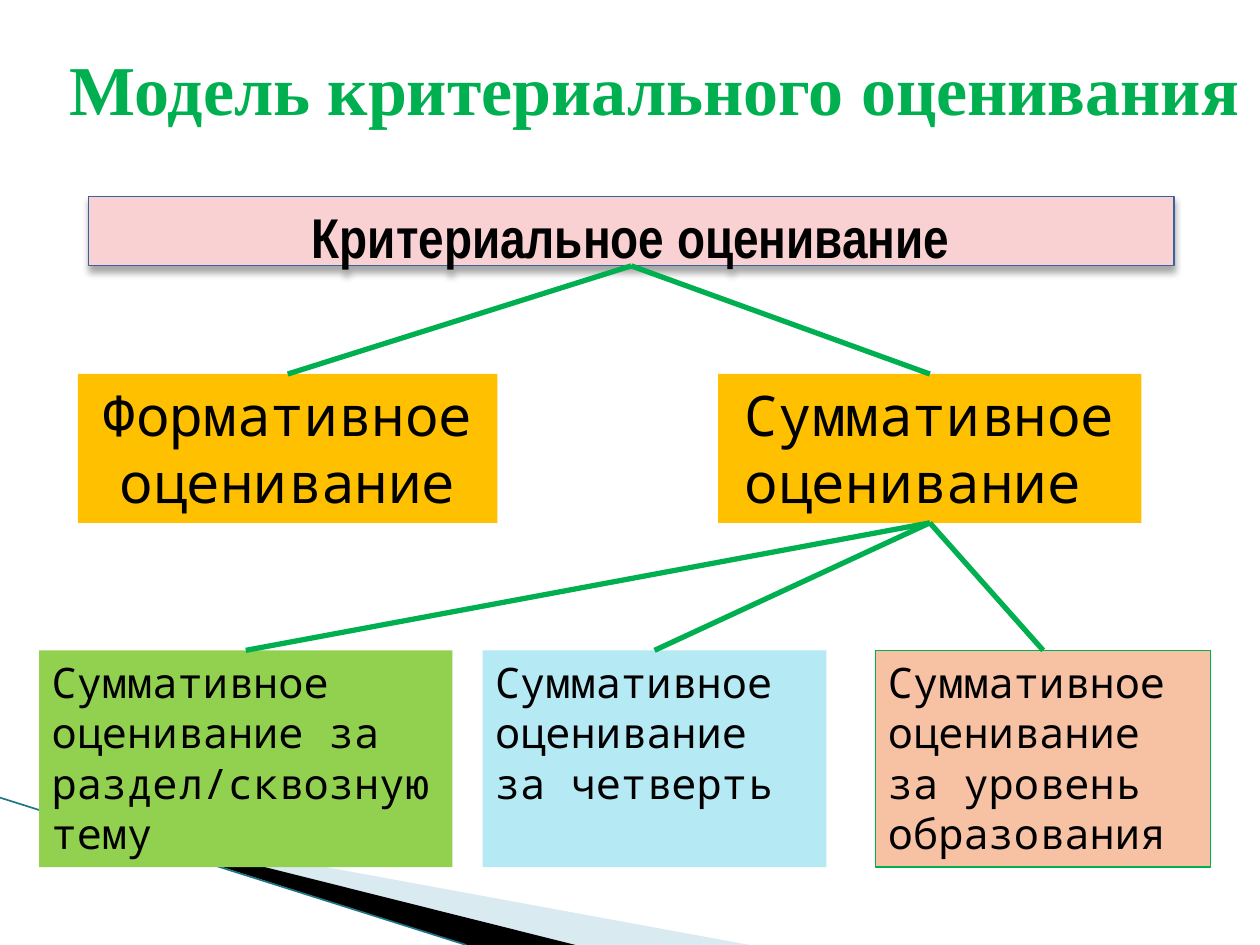
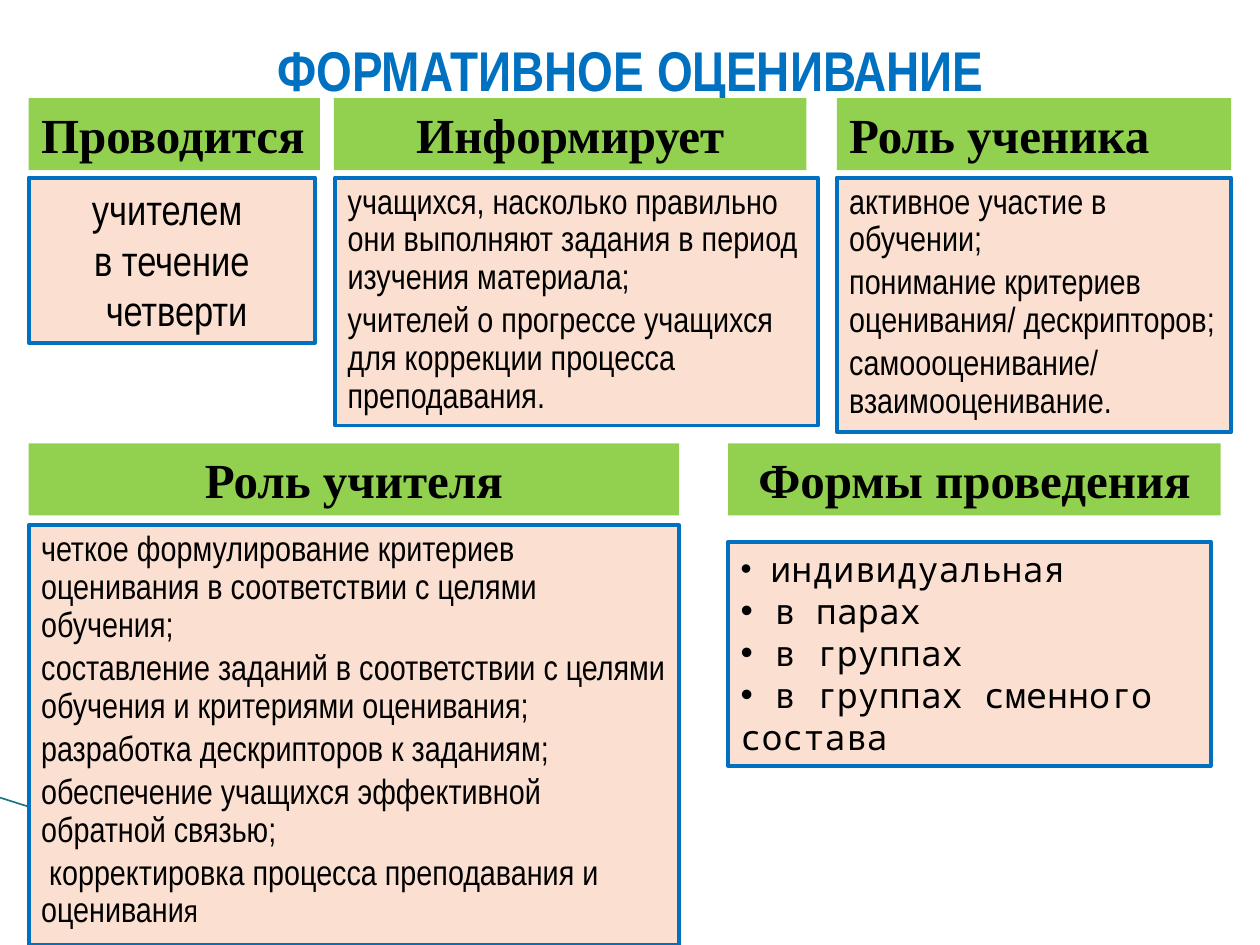
"""Builds two slides on criteria-based assessment: the model and the formative part."""
from lxml import etree
from pptx import Presentation
from pptx.dml.color import RGBColor
from pptx.enum.shapes import MSO_CONNECTOR, MSO_SHAPE
from pptx.enum.text import MSO_ANCHOR, MSO_AUTO_SIZE, PP_ALIGN
from pptx.oxml import parse_xml
from pptx.oxml.ns import nsdecls, qn
from pptx.util import Cm, Pt

RECTANGLE = MSO_SHAPE.RECTANGLE
STRAIGHT = MSO_CONNECTOR.STRAIGHT
LEFT, CENTER = PP_ALIGN.LEFT, PP_ALIGN.CENTER
TOP, MIDDLE = MSO_ANCHOR.TOP, MSO_ANCHOR.MIDDLE
NO_AUTOSIZE = MSO_AUTO_SIZE.NONE
BOTTOM_SITE, TOP_SITE = 2, 0

BLACK = RGBColor(0x00, 0x00, 0x00)
GREEN = RGBColor(0x00, 0xB0, 0x50)
BLUE = RGBColor(0x00, 0x70, 0xC0)
NAVY = RGBColor(0x39, 0x63, 0x9D)
PINK = RGBColor(0xF9, 0xD1, 0xD3)
AMBER = RGBColor(0xFF, 0xC0, 0x00)
LIME = RGBColor(0x92, 0xD0, 0x50)
SKY = RGBColor(0xB5, 0xE9, 0xF4)
SALMON = RGBColor(0xF7, 0xC1, 0xA4)
PEACH = RGBColor(0xFB, 0xE0, 0xD1)
PALE_BLUE = RGBColor(0xD9, 0xEA, 0xF1)
TEAL = RGBColor(0x1F, 0x75, 0x87)

NARROW, MONO, SERIF = "Arial Narrow", "Noto Sans Mono", "Times New Roman"

MODEL_TITLE = "Модель критериального оценивания"
ROOT = "Критериальное оценивание"
KINDS = [
    (1.57, 8.46, ["Формативное ", "оценивание"]),
    (14.48, 8.53, ["Суммативное ", "оценивание "]),
]
SUMMATIVE = [
    (0.79, 8.33, LIME, None, ["Суммативное оценивание за раздел/сквозную тему"]),
    (9.73, 6.93, SKY, None, ["Суммативное оценивание", "за четверть"]),
    (17.65, 6.76, SALMON, GREEN, ["Суммативное оценивание за уровень образования"]),
]

FORMATIVE_TITLE = "ФОРМАТИВНОЕ ОЦЕНИВАНИЕ"
WHEN = dict(size=24, name=NARROW, align=CENTER)
ROLE = dict(size=20, name=NARROW, spacing=0.9, after=3)
FORMS = dict(size=20, name=MONO, bullet="•")
PANELS = [
    ("Проводится", LEFT, (0.58, 1.98, 5.87), (0.58, 3.58, 5.77, 3.33), WHEN,
     ["учителем ", "в течение", " четверти"]),
    ("Информирует", CENTER, (6.73, 1.98, 9.53), (6.76, 3.58, 9.73, 5), ROLE,
     ["учащихся, насколько правильно они выполняют задания в период изучения материала;",
      "учителей о прогрессе учащихся для коррекции процесса преподавания."]),
    ("Роль ученика", LEFT, (16.87, 1.98, 7.95), (16.87, 3.58, 7.95, 5.13), ROLE,
     ["активное участие в обучении;",
      "понимание критериев оценивания/ дескрипторов;",
      "самоооценивание/ взаимооценивание."]),
    ("Роль учителя", CENTER, (0.58, 8.94, 13.11), (0.58, 10.59, 13.11, 8.46), ROLE,
     ["четкое формулирование критериев оценивания в соответствии с целями обучения;",
      "составление заданий в соответствии с целями обучения и критериями оценивания;",
      "разработка дескрипторов к заданиям;",
      "обеспечение учащихся эффективной обратной связью;",
      [(" корректировка процесса преподавания и оценивани", 20), ("я", 18)]]),
    ("Формы проведения", CENTER, (14.68, 8.94, 9.93), (14.68, 10.92, 9.73, 4.52), FORMS,
     [[(" ", 18), ("индивидуальная", 20)], " в парах", " в группах",
      " в группах сменного состава"]),
]
HEADER_HEIGHT = 1.45

WINGS = [
    (PALE_BLUE, [(1.4, 16.53), (15.11, 19.05), (11.58, 19.05)]),
    (BLACK, [(1.35, 16.48), (11.6, 19.05), (9.4, 19.05)]),
]
WING_EDGE = [(0, 16.08), (9.4, 19.05)]


def write(frame, lines, size, name, color=BLACK, bold=False, align=LEFT,
          spacing=1, after=0, bullet=None, anchor=TOP):
    """Fill a text frame; a line is a string or a list of (text, size) spans."""
    frame.word_wrap = True
    frame.auto_size = NO_AUTOSIZE
    frame.vertical_anchor = anchor
    for index, line in enumerate(lines):
        para = frame.add_paragraph() if index else frame.paragraphs[0]
        para.alignment = align
        para.line_spacing = spacing
        para.space_after = Pt(after)
        if bullet:
            properties = para._p.get_or_add_pPr()
            etree.SubElement(properties, qn("a:buFont")).set("typeface", "Arial")
            etree.SubElement(properties, qn("a:buChar")).set("char", bullet)
        for text, points in [(line, size)] if isinstance(line, str) else line:
            span = para.add_run()
            span.text = text
            span.font.size = Pt(points)
            span.font.name = name
            span.font.bold = bold
            span.font.color.rgb = color


def paint(shape, fill, line=None, width=0.75):
    """Give a shape a flat fill and an optional outline."""
    shape.shadow.inherit = False
    shape.fill.solid()
    shape.fill.fore_color.rgb = fill
    if line is None:
        shape.line.fill.background()
    else:
        shape.line.color.rgb = line
        shape.line.width = Pt(width)


def add_box(page, place, fill, lines, line=None, width=0.75, **style):
    """Add a filled rectangle with text."""
    box = page.shapes.add_shape(RECTANGLE, *map(Cm, place))
    paint(box, fill, line, width)
    write(box.text_frame, lines, **style)
    return box


def add_line(page, start, end, color, width):
    """Add a straight line between two points."""
    line = page.shapes.add_connector(STRAIGHT, *map(Cm, start + end))
    line.line.color.rgb = color
    line.line.width = Pt(width)
    etree.SubElement(line._element.spPr, qn("a:effectLst"))
    return line


def link(page, parent, child):
    """Join the bottom of one box to the top of another."""
    line = add_line(page, (0, 0), (0, 0), GREEN, 3)
    line.begin_connect(parent, BOTTOM_SITE)
    line.end_connect(child, TOP_SITE)


def add_page(deck, title, place, wings, **style):
    """Add a page with the corner decoration and a formatted title."""
    page = deck.slides.add_slide(deck.slide_layouts[5])
    for fill, points in wings:
        corners = [(Cm(x), Cm(y)) for x, y in points]
        builder = page.shapes.build_freeform(*corners[0], scale=1.0)
        builder.add_line_segments(corners[1:], close=True)
        paint(builder.convert_to_shape(), fill)
    add_line(page, *WING_EDGE, TEAL, 0.95)
    heading = page.shapes.title
    heading.left, heading.top, heading.width, heading.height = map(Cm, place)
    write(heading.text_frame, [title], bold=True, align=CENTER, **style)
    return page


def add_soft_shadow(box):
    """Put a soft shadow under a box."""
    effects = box._element.spPr.find(qn("a:effectLst"))
    effects.append(parse_xml(
        f'<a:outerShdw {nsdecls("a")} blurRad="{Pt(4)}" dist="{Pt(3)}" dir="5400000" '
        'rotWithShape="0"><a:srgbClr val="000000"><a:alpha val="35000"/></a:srgbClr>'
        '</a:outerShdw>'))


def build_model(deck):
    """Build the tree of assessment kinds."""
    page = add_page(deck, MODEL_TITLE, (0, 0.79, 26.39, 1.96), WINGS,
                    size=40, name=SERIF, color=GREEN)
    root = add_box(page, (1.78, 3.96, 21.89, 1.4), PINK, [ROOT], line=NAVY, size=32,
                   name=NARROW, bold=True, align=CENTER, spacing=1.15, after=10,
                   anchor=MIDDLE)
    add_soft_shadow(root)
    kinds = [add_box(page, (left, 7.54, width, 3), AMBER, lines, size=32, name=MONO,
                     align=CENTER)
             for left, width, lines in KINDS]
    leaves = [add_box(page, (left, 13.11, width, 4.37), fill, lines, line=line, size=24,
                      name=MONO)
              for left, width, fill, line, lines in SUMMATIVE]
    for parent, children in [(root, kinds), (kinds[-1], leaves)]:
        for child in children:
            link(page, parent, child)


def build_formative(deck):
    """Build the panels about formative assessment."""
    page = add_page(deck, FORMATIVE_TITLE, (2.39, 0.58, 20.65, 1.63), WINGS[1:],
                    size=32, name=NARROW, color=BLUE)
    for header, align, header_place, body_place, style, lines in PANELS:
        add_box(page, (*header_place, HEADER_HEIGHT), LIME, [header], size=28, name=SERIF,
                bold=True, align=align)
        add_box(page, body_place, PEACH, lines, line=BLUE, width=2.25, **style)


def main():
    """Build and save the deck."""
    deck = Presentation()
    deck.slide_width, deck.slide_height = Cm(25.4), Cm(19.05)
    build_model(deck)
    build_formative(deck)
    deck.save("out.pptx")


if __name__ == "__main__":
    main()
